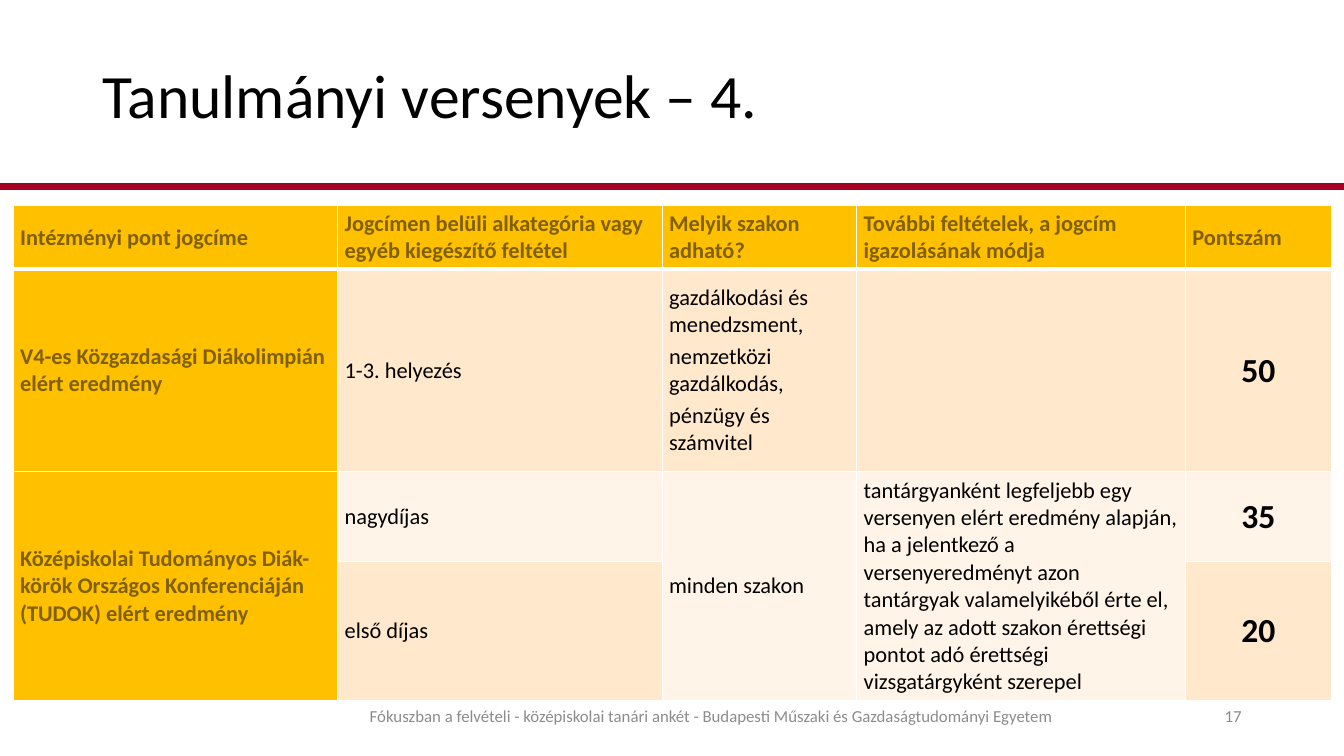
from dataclasses import dataclass
from itertools import product
from typing import Any

from lxml.etree import SubElement
from pptx import Presentation
from pptx.dml.color import RGBColor
from pptx.enum.text import MSO_ANCHOR, PP_ALIGN
from pptx.oxml.ns import qn
from pptx.util import Inches, Pt

BLACK = RGBColor(0x00, 0x00, 0x00)
WHITE = RGBColor(0xFF, 0xFF, 0xFF)
CRIMSON = RGBColor(0xA5, 0x00, 0x21)
GREY = RGBColor(0x8C, 0x8C, 0x8C)
GOLD = RGBColor(0xFF, 0xC0, 0x00)
BROWN = RGBColor(0x80, 0x60, 0x00)
PEACH = RGBColor(0xFF, 0xE8, 0xCC)
CREAM = RGBColor(0xFF, 0xF4, 0xE7)

# The slide is a grid of 160 columns by 90 rows, twelve to the inch
GRID_COLUMNS, GRID_ROWS = 160, 90


def grid(count: float) -> int:
    return Inches(count / 12)


@dataclass(frozen=True)
class Area:
    column: float
    row: float
    columns: float
    rows: float

    def emu(self) -> tuple[int, ...]:
        return tuple(map(grid, (self.column, self.row, self.columns, self.rows)))


@dataclass(frozen=True)
class Style:
    size: int
    color: RGBColor
    bold: bool = False
    align: PP_ALIGN = PP_ALIGN.LEFT
    after: int = 0
    spacing: float = 1.0


@dataclass(frozen=True)
class Entry:
    lines: tuple[str, ...]
    style: Style
    fill: RGBColor
    row_span: int = 1


def assign(target: Any, values: dict[str, Any]) -> None:
    for name, value in values.items():
        setattr(target, name, value)


def write(frame: Any, lines: tuple[str, ...], style: Style) -> None:
    for index, line in enumerate(lines):
        paragraph = frame.add_paragraph() if index else frame.paragraphs[0]
        assign(paragraph, {"alignment": style.align, "space_after": Pt(style.after),
                           "line_spacing": style.spacing})
        run = paragraph.add_run()
        run.text = line
        assign(run.font, {"name": "Calibri", "size": Pt(style.size), "bold": style.bold})
        run.font.color.rgb = style.color


def add_note(slide: Any, area: Area, text: str, style: Style) -> None:
    frame = slide.shapes.add_textbox(*area.emu()).text_frame
    assign(frame, {"word_wrap": True, "vertical_anchor": MSO_ANCHOR.MIDDLE})
    write(frame, (text,), style)


def add_border(cell: Any, side: str, points: float) -> None:
    edge = SubElement(cell._tc.get_or_add_tcPr(), qn(f"a:ln{side}"), w=str(Pt(points)))
    SubElement(SubElement(edge, qn("a:solidFill")), qn("a:srgbClr"), val=str(WHITE))


def format_cell(cell: Any, fill: RGBColor, widths: dict[str, int]) -> None:
    for side, points in widths.items():
        add_border(cell, side, points)
    cell.fill.solid()
    cell.fill.fore_color.rgb = fill
    assign(cell, {"margin_left": Inches(0.07), "margin_right": Inches(0.07),
                  "margin_top": 0, "margin_bottom": 0,
                  "vertical_anchor": MSO_ANCHOR.MIDDLE})


TITLE = Style(44, BLACK, spacing=0.9)
FOOTER = Style(12, GREY, align=PP_ALIGN.CENTER)
PAGE = Style(12, GREY, align=PP_ALIGN.RIGHT)
HEADING = Style(16, BROWN, bold=True, after=2)
SCORE_HEADING = Style(16, BROWN, bold=True, align=PP_ALIGN.JUSTIFY, after=2)
PLAIN = Style(16, BLACK, after=2)
LABEL = Style(16, BLACK, align=PP_ALIGN.JUSTIFY, after=2)
MAJORS = Style(16, BLACK, after=3)
SCORE = Style(24, BLACK, bold=True, align=PP_ALIGN.CENTER, after=2)


def heading(text: str, row_span: int = 1, style: Style = HEADING) -> Entry:
    return Entry((text,), style, GOLD, row_span)


# Table content; None stands for a cell covered by the one above
COLUMN_WIDTHS = (38.64, 38.64, 23.16, 39.12, 17.4)
ROW_HEIGHTS = (7.56, 24.12, 10.68, 16.56)
COMPETITIONS: tuple[tuple[Entry | None, ...], ...] = (
    (
        heading("Intézményi pont jogcíme"),
        heading("Jogcímen belüli alkategória vagy egyéb kiegészítő feltétel"),
        heading("Melyik szakon adható?"),
        heading("További feltételek, a jogcím igazolásának módja"),
        heading("Pontszám", style=SCORE_HEADING),
    ),
    (
        heading("V4-es Közgazdasági Diákolimpián elért eredmény"),
        Entry(("1-3. helyezés",), LABEL, PEACH),
        Entry(("gazdálkodási és menedzsment,", "nemzetközi gazdálkodás,",
               "pénzügy és számvitel"), MAJORS, PEACH),
        Entry((), PLAIN, PEACH),
        Entry(("50",), SCORE, PEACH),
    ),
    (
        heading("Középiskolai Tudományos Diák- körök Országos Konferenciáján "
                "(TUDOK) elért eredmény", row_span=2),
        Entry(("nagydíjas",), LABEL, CREAM),
        Entry(("minden szakon",), LABEL, CREAM, 2),
        Entry(("tantárgyanként legfeljebb egy versenyen elért eredmény alapján, "
               "ha a jelentkező a versenyeredményt azon tantárgyak valamelyikéből "
               "érte el, amely az adott szakon érettségi pontot adó érettségi "
               "vizsgatárgyként szerepel",), PLAIN, CREAM, 2),
        Entry(("35",), SCORE, CREAM),
    ),
    (
        None,
        Entry(("első díjas",), LABEL, PEACH),
        None,
        None,
        Entry(("20",), SCORE, PEACH),
    ),
)


def add_competitions(slide: Any) -> None:
    area = Area(1.56, 24.5, sum(COLUMN_WIDTHS), sum(ROW_HEIGHTS))
    table = slide.shapes.add_table(len(ROW_HEIGHTS), len(COLUMN_WIDTHS), *area.emu()).table
    for column, width in zip(table.columns, COLUMN_WIDTHS):
        column.width = grid(width)
    for row, height in zip(table.rows, ROW_HEIGHTS):
        row.height = grid(height)
    for r, c in product(range(len(ROW_HEIGHTS)), range(len(COLUMN_WIDTHS))):
        cell, entry = table.cell(r, c), COMPETITIONS[r][c]
        covering = entry or COMPETITIONS[r - 1][c]
        # A thicker line parts the heading row from the body
        format_cell(cell, covering.fill, {"L": 1, "R": 1, "T": 3 if r == 1 else 1,
                                          "B": 3 if r == 0 else 1})
        if entry:
            write(cell.text_frame, entry.lines, entry.style)
            if entry.row_span > 1:
                cell.merge(table.cell(r + entry.row_span - 1, c))


def main() -> None:
    deck = Presentation()
    assign(deck, {"slide_width": grid(GRID_COLUMNS), "slide_height": grid(GRID_ROWS)})
    slide = deck.slides.add_slide(deck.slide_layouts[5])

    # Rule below the title
    rule = slide.shapes.add_connector(1, 0, grid(22.2), grid(GRID_COLUMNS), grid(22.2))
    rule.line.color.rgb = CRIMSON
    rule.line.width = Pt(5)
    SubElement(rule._element.spPr, qn("a:effectLst"))

    # Title
    title = slide.shapes.title
    places = zip(("left", "top", "width", "height"), Area(11, 3, 106, 17.4).emu())
    assign(title, dict(places))
    assign(title.text_frame, {"word_wrap": True, "vertical_anchor": MSO_ANCHOR.MIDDLE})
    write(title.text_frame, ("Tanulmányi versenyek – 4.",), TITLE)

    # Footer and page number
    add_note(slide, Area(42, 83.4, 85.4, 3.6),
             "Fókuszban a felvételi - középiskolai tanári ankét - "
             "Budapesti Műszaki és Gazdaságtudományi Egyetem", FOOTER)
    add_note(slide, Area(120.6, 83.4, 28.4, 3.6), "17", PAGE)

    # Competitions and their points
    add_competitions(slide)
    deck.save("out.pptx")


if __name__ == "__main__":
    main()
